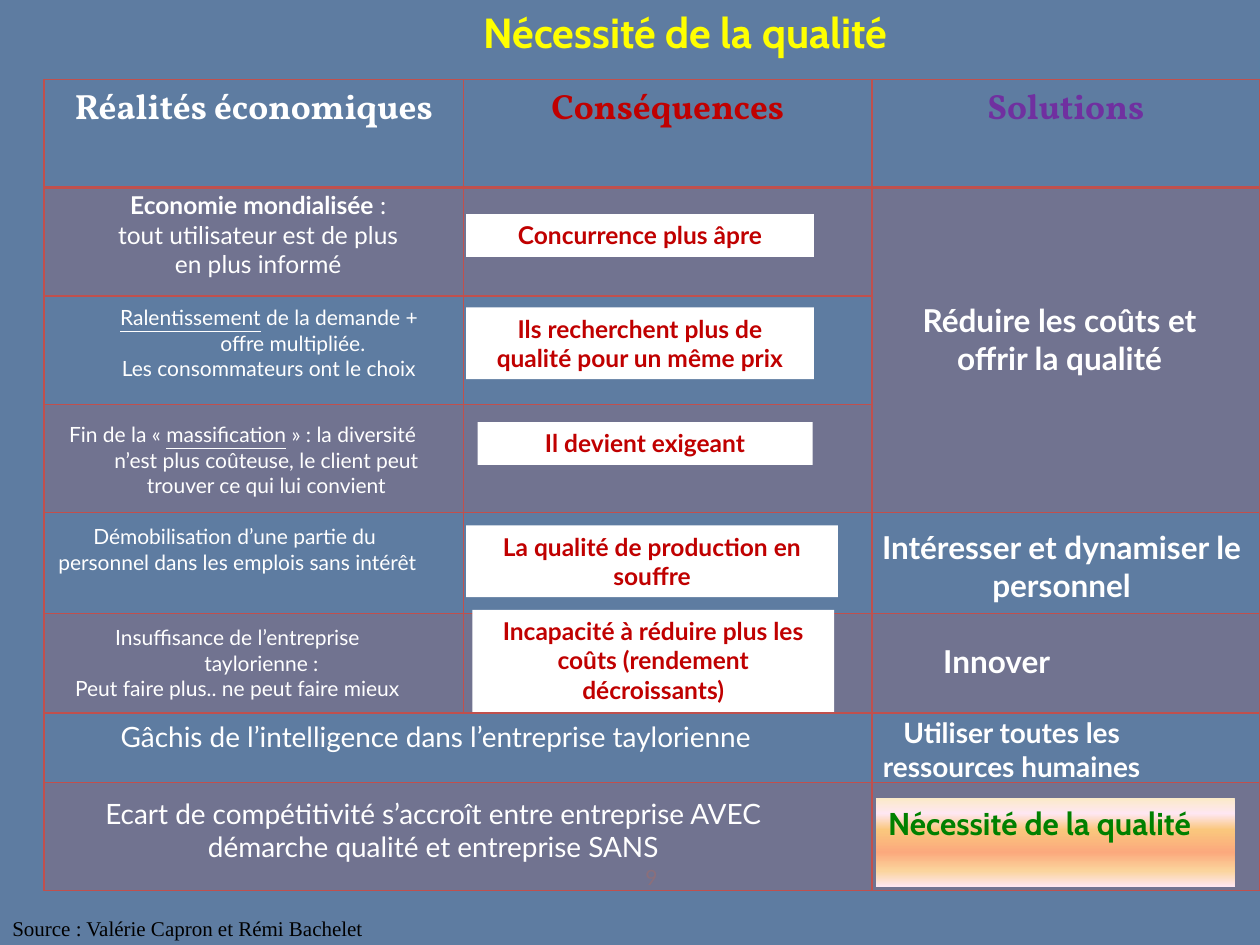
from dataclasses import dataclass

from lxml import etree
from pptx import Presentation
from pptx.dml.color import RGBColor
from pptx.enum import shapes, text
from pptx.oxml import ns
from pptx.util import Emu, Inches, Pt

COLORS = {
    "ground": "5E7CA1", "title": "FFFF00", "white": "FFFFFF", "black": "000000",
    "effect": "C00000", "solution": "7030A0", "rule": "C0504D",
    "quality": "008000", "number": "8B6F7B",
}
GLOW = [(0, "FBEAC7"), (18, "FEE7F2"), (36, "FAC77D"),
        (61, "FBA97D"), (82, "FBD49C"), (100, "FEE7F2")]
BODY, DISPLAY, HEADING, SERIF = "Lato", "Cabin", "Vollkorn", "Times New Roman"
GRID = Inches(0.1)  # the slide is 100 columns by 75 rows
CENTER = text.PP_ALIGN.CENTER
HANGING = 3.8


@dataclass
class Box:
    """A rectangle in grid columns and rows."""
    left: float
    top: float
    width: float
    height: float

    def inset(self, left, top, width, height):
        return Box(self.left + left, self.top + top, width, height)

    def emu(self):
        return [Emu(round(n * GRID)) for n in (self.left, self.top, self.width, self.height)]


def rgb(name):
    return RGBColor.from_string(COLORS[name])


def write(frame, paragraphs, size, color, font=BODY, bold=False, align=CENTER, hanging=0):
    """Each paragraph is a list of (words, marks); marks holds b and u."""
    for i, runs in enumerate(paragraphs):
        paragraph = frame.paragraphs[0] if i == 0 else frame.add_paragraph()
        paragraph.alignment = align
        if hanging:
            indent = round(hanging * GRID)
            props = paragraph._p.get_or_add_pPr()
            props.set("marL", str(indent))
            props.set("indent", str(-indent))
        for words, marks in runs:
            run = paragraph.add_run()
            run.text = words
            run.font.size, run.font.name = Pt(size), font
            run.font.bold = bold or "b" in marks
            run.font.underline = "u" in marks
            run.font.color.rgb = rgb(color)


def plain(*lines):
    return [[(line, "")] for line in lines]


def label(slide, box, paragraphs, size, color="white", wrap=True, grow=True,
          anchor=text.MSO_ANCHOR.TOP, **style):
    frame = slide.shapes.add_textbox(*box.emu()).text_frame
    frame.word_wrap, frame.vertical_anchor = wrap, anchor
    fit = text.MSO_AUTO_SIZE
    frame.auto_size = fit.SHAPE_TO_FIT_TEXT if grow else fit.NONE
    write(frame, paragraphs, size, color, **style)


def panel(slide, box, words, size, color, **style):
    shape = slide.shapes.add_shape(shapes.MSO_SHAPE.RECTANGLE, *box.emu())
    shape.shadow.inherit = False
    shape.fill.solid()
    shape.fill.fore_color.rgb = rgb("white")
    shape.line.fill.background()
    shape.text_frame.word_wrap = True
    shape.text_frame.vertical_anchor = text.MSO_ANCHOR.TOP
    write(shape.text_frame, plain(words), size, color, bold=True, **style)
    return shape


def add_color(parent, value, alpha=None):
    color = etree.SubElement(parent, ns.qn("a:srgbClr"), val=value)
    if alpha:
        etree.SubElement(color, ns.qn("a:alpha"), val=str(alpha * 1000))


def style_cell(cell, row):
    # Borders, with a heavier rule under the header
    props = cell._tc.get_or_add_tcPr()
    heavy = {0: "lnB", 1: "lnT"}.get(row)
    for side in ("lnL", "lnR", "lnT", "lnB"):
        width = Pt(2 if side == heavy else 1)
        line = etree.SubElement(props, ns.qn("a:" + side), w=str(int(width)))
        add_color(etree.SubElement(line, ns.qn("a:solidFill")), COLORS["rule"])
    # Every second row is tinted
    if row % 2:
        add_color(etree.SubElement(props, ns.qn("a:solidFill")), COLORS["rule"], 20)
    else:
        cell.fill.background()


def framework(slide, box, columns, rows):
    table = slide.shapes.add_table(len(rows), len(columns), *box.emu()).table
    table.first_row = table.horz_banding = False
    for column, width in zip(table.columns, columns):
        column.width = Emu(round(width * GRID))
    for r, height in enumerate(rows):
        table.rows[r].height = Emu(round(height * GRID))
        for cell in table.rows[r].cells:
            style_cell(cell, r)
    table.cell(1, 2).merge(table.cell(3, 2))
    for r in (6, 7):
        table.cell(r, 0).merge(table.cell(r, 1))
    headings = [("Réalités économiques", "white"), ("Conséquences", "effect"),
                ("Solutions", "solution")]
    for cell, (words, color) in zip(table.rows[0].cells, headings):
        write(cell.text_frame, plain(words), 20, color, font=HEADING, bold=True)


def realities(slide, box):
    label(slide, box.inset(4, 8.3, 26, 8.1),
          [[("Economie mondialisée", "b"),
            (" : tout utilisateur est de plus en plus informé", "")]], 14)
    details = [
        ((3.1, 17.4, 29.5, 7.1),
         [[("Ralentissement", "u"), (" de la demande + offre multipliée.", "")],
          [("Les consommateurs ont le choix", "")]]),
        ((-0.8, 26.7, 33.1, 7.1),
         [[("Fin de la « ", ""), ("massification", "u"),
           (" » : la diversité n’est plus coûteuse, le client peut trouver "
            "ce qui lui convient", "")]]),
        ((-0.8, 34.8, 32.3, 5),
         plain("Démobilisation d’une partie du ",
               "personnel dans les emplois sans intérêt")),
        ((0.8, 42.8, 29.1, 7.1),
         plain("Insuffisance de l’entreprise taylorienne :",
               "Peut faire plus.. ne peut faire mieux")),
    ]
    for place, paragraphs in details:
        label(slide, box.inset(*place), paragraphs, 12, hanging=HANGING)
    # Statements across the first two columns
    for place, words in [
        ((0.8, 50.3, 60.6, 3.7), "Gâchis de l’intelligence dans l’entreprise taylorienne"),
        ((0.8, 56.4, 60.2, 6.4), "Ecart de compétitivité s’accroît entre entreprise AVEC "
                                 "démarche qualité et entreprise SANS"),
    ]:
        label(slide, box.inset(*place), plain(words), 16)


def consequences(slide, box):
    for place, words in [
        ((0.2, 10.7, 27.6, 3.4), "Concurrence plus âpre"),
        ((0.2, 18.1, 27.6, 5.7), "Ils recherchent plus de qualité pour un même prix"),
        ((1.1, 27.2, 26.6, 3.4), "Il devient exigeant"),
        ((0.2, 35.4, 29.5, 5.7), "La qualité de production en souffre"),
        ((0.7, 42.1, 28.7, 8.1),
         "Incapacité à réduire plus les coûts (rendement décroissants)"),
    ]:
        panel(slide, box.inset(*place), words, 14, "effect")


def solutions(slide, box):
    for place, words, size in [
        ((1.1, 17.1, 27.6, 7.1), "Réduire les coûts et offrir la qualité", 18),
        ((-0.7, 35.1, 31.5, 7.1), "Intéresser et dynamiser le personnel", 18),
        ((-2.7, 44.2, 25.2, 4), "Innover", 18),
        ((-2.7, 50, 27.6, 6.4), "Utiliser toutes les ressources humaines", 16),
    ]:
        label(slide, box.inset(*place), plain(words), size, bold=True)
    # Closing answer on a warm gradient
    answer = panel(slide, box.inset(0.3, 57, 28.5, 7.1), "Nécessité de la qualité", 18,
                   "quality", font=DISPLAY, align=text.PP_ALIGN.LEFT)
    answer.fill.gradient()
    answer.fill.gradient_angle = 270
    stops = answer._element.spPr.find(".//" + ns.qn("a:gsLst"))
    for stop in list(stops):
        stops.remove(stop)
    for position, value in GLOW:
        add_color(etree.SubElement(stops, ns.qn("a:gs"), pos=str(position * 1000)), value)


def main():
    deck = Presentation()
    deck.slide_width, deck.slide_height = 100 * GRID, 75 * GRID
    slide = deck.slides.add_slide(deck.slide_layouts[6])
    slide.background.fill.solid()
    slide.background.fill.fore_color.rgb = rgb("ground")

    columns = [33.3, 32.4, 30.8]
    rows = [8.6] * 4 + [8, 7.9, 5.5, 8.6]
    body = Box(3.5, 6.3, sum(columns), sum(rows))
    lefts = [sum(columns[:i]) for i in range(3)]

    label(slide, Box(37.4, 0, 37.7, 5), plain("Nécessité de la qualité"), 24, "title",
          wrap=False, font=DISPLAY, bold=True, align=text.PP_ALIGN.LEFT)
    framework(slide, body, columns, rows)
    for region, left, width in zip((realities, consequences, solutions), lefts, columns):
        region(slide, body.inset(left, 0, width, body.height))

    # Source and slide number
    label(slide, Box(0, 72.4, 51.6, 2.6), plain("Source : Valérie Capron et Rémi Bachelet"),
          12, "black", grow=False, anchor=text.MSO_ANCHOR.MIDDLE, font=SERIF,
          align=text.PP_ALIGN.LEFT)
    label(slide, Box(49.7, 68.1, 4, 3), plain("9"), 12, "number", grow=False)
    deck.save("out.pptx")


if __name__ == "__main__":
    main()
